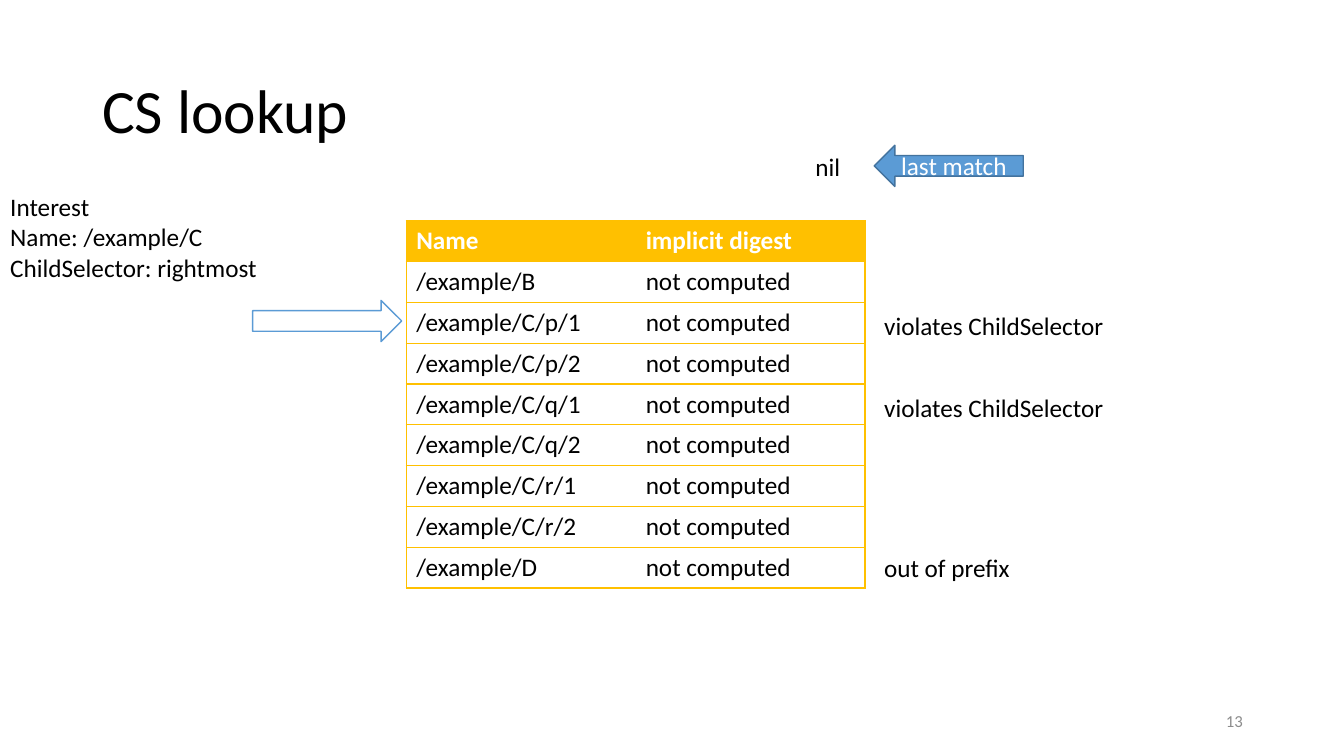
from lxml.etree import SubElement
from pptx import Presentation
from pptx.dml.color import RGBColor
from pptx.enum.shapes import MSO_SHAPE
from pptx.enum.text import MSO_ANCHOR, PP_ALIGN
from pptx.oxml.ns import qn
from pptx.util import Inches, Pt

FONT = "Calibri"
BLACK, WHITE, GRAY = "000000", "FFFFFF", "8C8C8C"
GOLD, BLUE, DARK_BLUE = "FFC000", "5B9BD5", "43739E"

# The content table sets the grid: its top left corner is column 0, row 0.
GRID_LEFT, GRID_TOP = 4.03, 2.19
COLUMN, ROW = 2.275, 0.405
NOTE_COLUMN = 2.04
ARROW_SIZE = (0.65, 1.01)

HEADER = ("Name", "implicit digest")
PACKETS = ("B", "C/p/1", "C/p/2", "C/q/1", "C/q/2", "C/r/1", "C/r/2", "D")
NOTES = (
    (2.07, 1.05, "violates ChildSelector"),
    (4.07, 1.05, "violates ChildSelector"),
    (8, 0.64, "out of prefix"),
)


def color(hex_string):
    return RGBColor.from_string(hex_string)


def place(column, row, columns, rows):
    """Turn grid units into left, top, width and height."""
    return (
        Inches(GRID_LEFT + column * COLUMN),
        Inches(GRID_TOP + row * ROW),
        Inches(columns * COLUMN),
        Inches(rows * ROW),
    )


def write(text_frame, text, size=18, font_color=BLACK, bold=False,
          align=PP_ALIGN.LEFT, spacing=1.0):
    text_frame.text = text
    for paragraph in text_frame.paragraphs:
        paragraph.alignment = align
        paragraph.line_spacing = spacing
        for run in paragraph.runs:
            run.font.name = FONT
            run.font.size = Pt(size)
            run.font.bold = bold
            run.font.color.rgb = color(font_color)


def add_text(slide, box, text, wrap=False, anchor=MSO_ANCHOR.TOP, **style):
    text_frame = slide.shapes.add_textbox(*place(*box)).text_frame
    text_frame.word_wrap = wrap
    text_frame.vertical_anchor = anchor
    write(text_frame, text, **style)


def add_arrow(slide, kind, column, row, fill, line, text=""):
    shape = slide.shapes.add_shape(kind, *place(column, row, *ARROW_SIZE))
    shape.shadow.inherit = False
    shape.fill.solid()
    shape.fill.fore_color.rgb = color(fill)
    shape.line.color.rgb = color(line)
    shape.line.width = Pt(1)
    if text:
        shape.text_frame.vertical_anchor = MSO_ANCHOR.MIDDLE
        write(shape.text_frame, text, font_color=WHITE, align=PP_ALIGN.CENTER)


def set_borders(cell, golden_sides):
    """Draw the given sides in gold and leave the other sides without a line."""
    properties = cell._tc.get_or_add_tcPr()
    for side in "LRTB":
        line = SubElement(properties, qn(f"a:ln{side}"), w=str(Pt(1)))
        if side in golden_sides:
            fill = SubElement(line, qn("a:solidFill"))
            SubElement(fill, qn("a:srgbClr"), val=GOLD)
        else:
            SubElement(line, qn("a:noFill"))


def add_content_table(slide):
    rows = [HEADER] + [(f"/example/{name}", "not computed") for name in PACKETS]
    box = place(0, 0, len(HEADER), len(rows))
    table = slide.shapes.add_table(len(rows), len(HEADER), *box).table
    table.horz_banding = False
    for row_index, texts in enumerate(rows):
        is_header = row_index == 0
        table.rows[row_index].height = Inches(ROW)
        for column_index, text in enumerate(texts):
            cell = table.cell(row_index, column_index)
            set_borders(cell, "TB" + "LR"[column_index])
            cell.fill.solid()
            cell.fill.fore_color.rgb = color(GOLD if is_header else WHITE)
            write(cell.text_frame, text, bold=is_header,
                  font_color=WHITE if is_header else BLACK)


def main():
    presentation = Presentation()
    presentation.slide_width = Inches(13.33)
    presentation.slide_height = Inches(7.5)
    slide = presentation.slides.add_slide(presentation.slide_layouts[6])

    add_text(slide, (-1.37, -4.42, 5.05, 3.58), "CS lookup", wrap=True,
             anchor=MSO_ANCHOR.MIDDLE, size=44, spacing=0.9)
    add_text(slide, (-1.77, -0.84, 1.17, 2.49),
             "Interest\nName: /example/C\nChildSelector: rightmost")
    add_content_table(slide)
    add_arrow(slide, MSO_SHAPE.RIGHT_ARROW, -0.67, 1.95, WHITE, BLUE)
    add_arrow(slide, MSO_SHAPE.LEFT_ARROW, NOTE_COLUMN, -1.85, BLUE, DARK_BLUE,
              "last match")
    add_text(slide, (1.74, -1.83, 0.2, 1), "nil")
    for row, columns, text in NOTES:
        add_text(slide, (NOTE_COLUMN, row, columns, 1), text)
    add_text(slide, (2.37, 11.75, 1.32, 1), "13", wrap=True,
             anchor=MSO_ANCHOR.MIDDLE, size=12, font_color=GRAY,
             align=PP_ALIGN.RIGHT)

    presentation.save("out.pptx")


if __name__ == "__main__":
    main()
